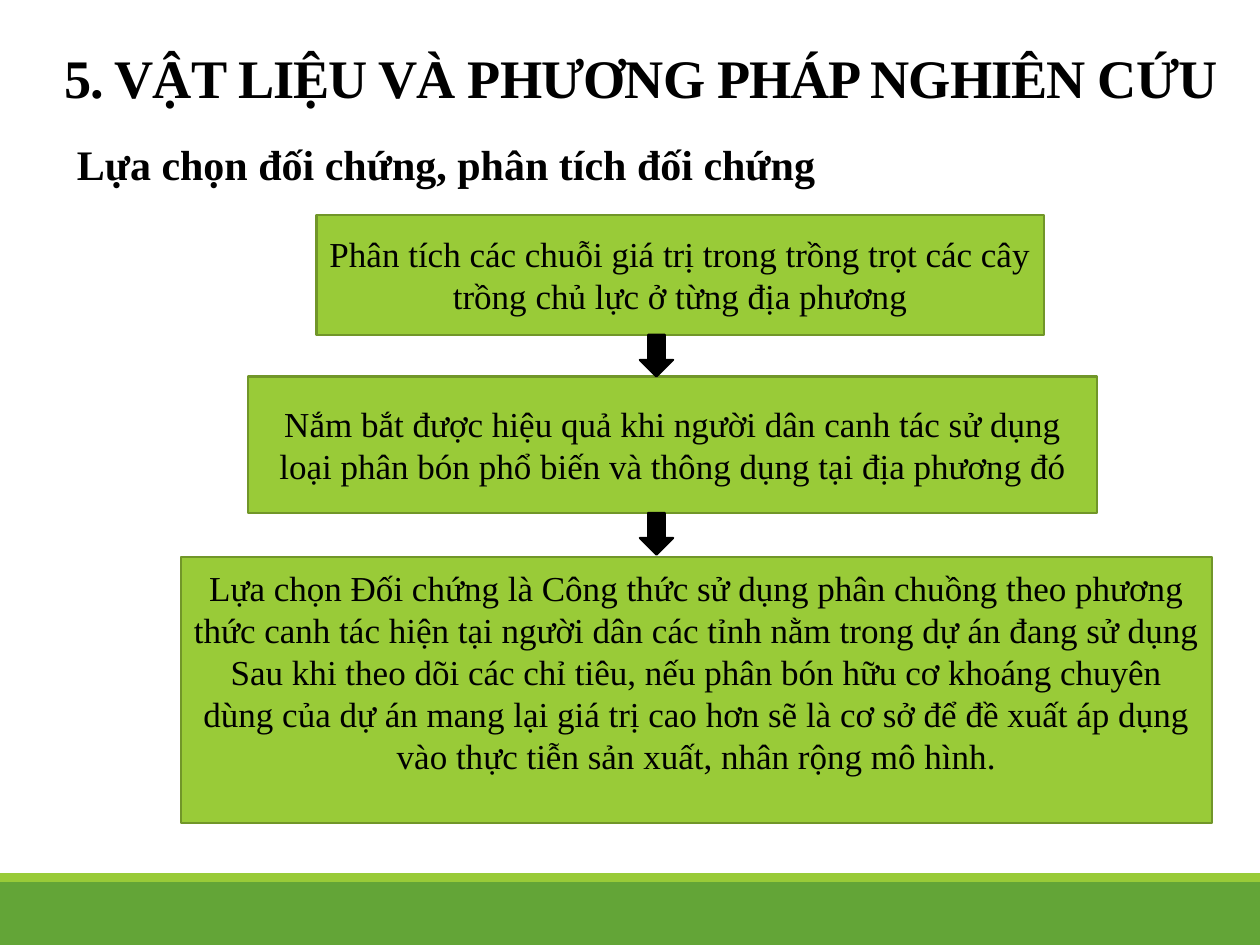
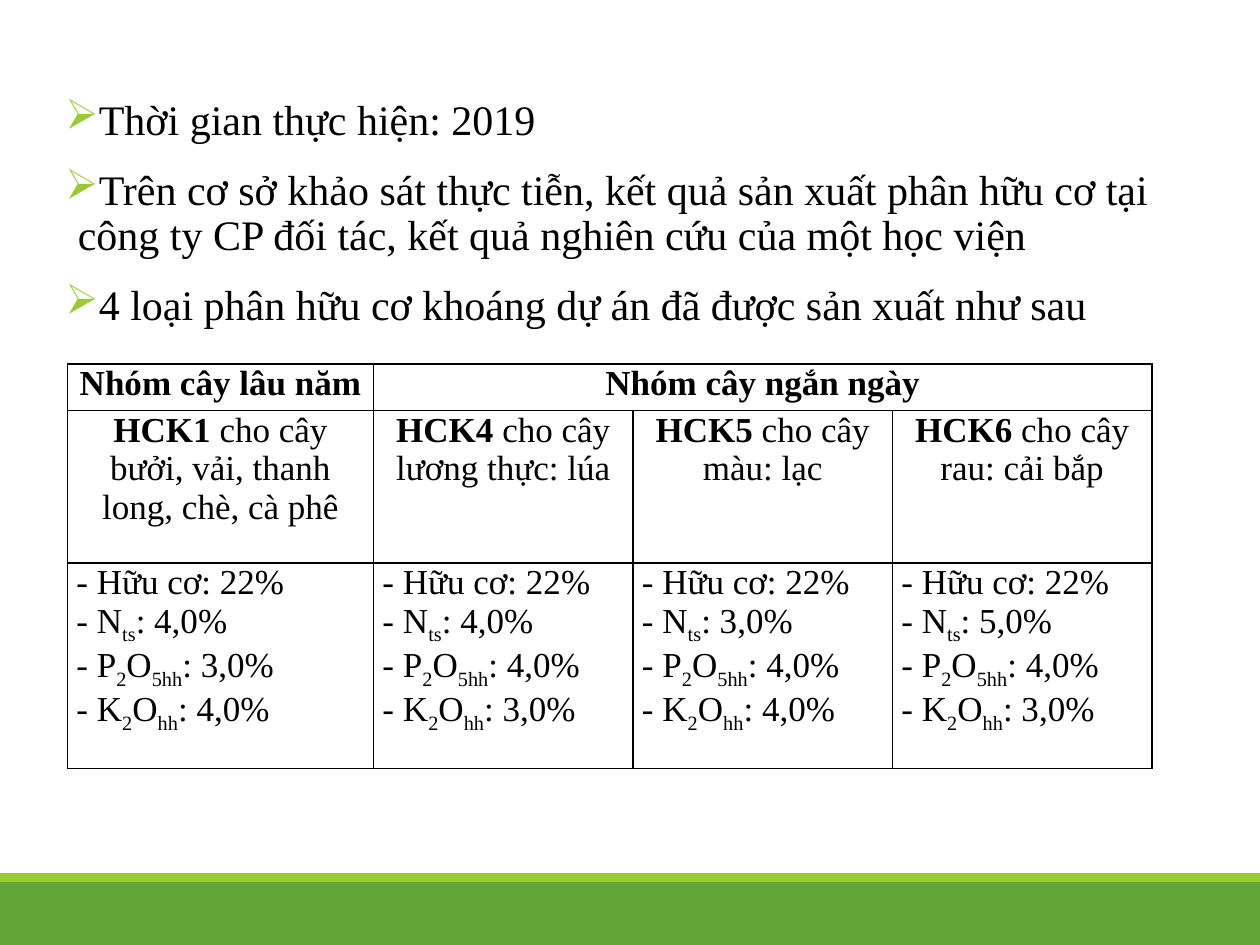
from dataclasses import dataclass

from lxml import etree
from pptx import Presentation
from pptx.dml.color import RGBColor
from pptx.enum import shapes, text
from pptx.oxml import ns
from pptx.util import Cm, Pt


@dataclass(frozen=True)
class Theme:
    font: str = "Times New Roman"
    black: str = "000000"
    lime: str = "99CB38"
    lime_edge: str = "719629"
    green: str = "63A537"
    title: int = 31
    body: int = 24
    small: int = 20
    edge: float = 1.25


THEME = Theme()
ALIGN = text.PP_ALIGN
SHAPE = shapes.MSO_SHAPE
WIDTH, HEIGHT = 25.4, 19.05

# Box on the flow chart: left, top, width, height, bottom inset, text
STEPS = [
    (6.38, 4.34, 14.66, 2.41, 0.13,
     "Phân tích các chuỗi giá trị trong trồng trọt các cây trồng chủ lực "
     "ở từng địa phương"),
    (5, 7.59, 17.12, 2.75, 0.13,
     "Nắm bắt được hiệu quả khi người dân canh tác sử dụng loại phân bón "
     "phổ biến và thông dụng tại địa phương đó"),
    (3.65, 11.23, 20.78, 5.36, 0.88,
     "Lựa chọn Đối chứng là Công thức sử dụng phân chuồng theo phương thức "
     "canh tác hiện tại người dân các tỉnh nằm trong dự án đang sử dụng Sau "
     "khi theo dõi các chỉ tiêu, nếu phân bón hữu cơ khoáng chuyên dùng của "
     "dự án mang lại giá trị cao hơn sẽ là cơ sở để đề xuất áp dụng vào thực "
     "tiễn sản xuất, nhân rộng mô hình."),
]

BULLETS = [
    "Thời gian thực hiện: 2019",
    "Trên cơ sở khảo sát thực tiễn, kết quả sản xuất phân hữu cơ tại công ty "
    "CP đối tác, kết quả nghiên cứu của một học viện",
    "4 loại phân hữu cơ khoáng dự án đã được sản xuất như sau",
]

# Fertiliser: name, crops, then total N, P2O5 and K2O contents
FERTILISERS = [
    ("HCK1", "bưởi, vải, thanh long, chè, cà phê", "4,0", "3,0", "4,0"),
    ("HCK4", "lương thực: lúa", "4,0", "4,0", "3,0"),
    ("HCK5", "màu: lạc", "3,0", "4,0", "4,0"),
    ("HCK6", "rau: cải bắp", "5,0", "4,0", "3,0"),
]


# --- Text helpers ---
def add_run(p, words, size, bold=False, subscript=False):
    r = p.add_run()
    r.text = words
    r.font.name = THEME.font
    r.font.size = Pt(size)
    r.font.bold = bold
    r.font.color.rgb = RGBColor.from_string(THEME.black)
    if subscript:
        r.font._element.set("baseline", "-25000")
    return r


def add_text(s, left, top, width, height, wrap=True):
    tf = s.shapes.add_textbox(Cm(left), Cm(top), Cm(width), Cm(height)).text_frame
    tf.word_wrap = wrap
    return tf


def add_bullet(p, char):
    pPr = p._p.get_or_add_pPr()
    pPr.set("marL", str(Cm(0.25)))
    pPr.set("indent", str(-Cm(0.25)))
    colour = etree.SubElement(pPr, ns.qn("a:buClr"))
    etree.SubElement(colour, ns.qn("a:srgbClr"), val=THEME.lime)
    etree.SubElement(pPr, ns.qn("a:buChar"), char=char)


# --- Shapes ---
def add_block(s, kind, left, top, width, height, fill, edge=None):
    sp = s.shapes.add_shape(kind, Cm(left), Cm(top), Cm(width), Cm(height))
    sp.shadow.inherit = False
    sp.fill.solid()
    sp.fill.fore_color.rgb = RGBColor.from_string(fill)
    if edge:
        sp.line.color.rgb = RGBColor.from_string(edge)
        sp.line.width = Pt(THEME.edge)
    else:
        sp.line.fill.background()
    return sp


def add_step(s, left, top, width, height, bottom_inset, words):
    sp = add_block(s, SHAPE.RECTANGLE, left, top, width, height,
                   THEME.lime, THEME.lime_edge)
    tf = sp.text_frame
    tf.word_wrap = True
    tf.vertical_anchor = text.MSO_ANCHOR.MIDDLE
    tf.margin_bottom = Cm(bottom_inset)
    tf.paragraphs[0].alignment = ALIGN.CENTER
    add_run(tf.paragraphs[0], words, THEME.small)


def new_slide(prs):
    s = prs.slides.add_slide(prs.slide_layouts[6])
    add_block(s, SHAPE.RECTANGLE, 0, 17.78, WIDTH, 1.27, THEME.green)
    add_block(s, SHAPE.RECTANGLE, 0, 17.6, WIDTH, 0.18, THEME.lime)
    return s


# --- Table ---
def style_cell(cell):
    cell.margin_left = cell.margin_right = Cm(0.18)
    cell.margin_top = cell.margin_bottom = 0
    cell.fill.background()
    tcPr = cell._tc.get_or_add_tcPr()
    for i, side in enumerate(("lnL", "lnR", "lnT", "lnB")):
        ln = etree.Element(ns.qn("a:" + side), w=str(Pt(1)))
        fill = etree.SubElement(ln, ns.qn("a:solidFill"))
        etree.SubElement(fill, ns.qn("a:srgbClr"), val=THEME.black)
        tcPr.insert(i, ln)


def fill_header(cell, bold_words, words=""):
    p = cell.text_frame.paragraphs[0]
    p.alignment = ALIGN.CENTER
    add_run(p, bold_words, THEME.small, bold=True)
    if words:
        add_run(p, words, THEME.small)


def fill_contents(cell, nitrogen, phosphate, potash):
    """Write one line per nutrient; text between underscores is subscript."""
    lines = ["- Hữu cơ: 22%", f"- N_ts_: {nitrogen}%",
             f"- P_2_O_5hh_: {phosphate}%", f"- K_2_O_hh_: {potash}%"]
    tf = cell.text_frame
    for i, line in enumerate(lines):
        p = tf.add_paragraph() if i else tf.paragraphs[0]
        p.alignment = ALIGN.JUSTIFY
        for j, part in enumerate(line.split("_")):
            add_run(p, part, THEME.small, subscript=j % 2 == 1)


def add_fertiliser_table(s, left, top, col_widths, row_heights):
    table = s.shapes.add_table(
        len(row_heights), len(col_widths), Cm(left), Cm(top),
        Cm(sum(col_widths)), Cm(sum(row_heights))).table
    table.first_row = table.horz_banding = False
    for column, width in zip(table.columns, col_widths):
        column.width = Cm(width)
    for row, height in zip(table.rows, row_heights):
        row.height = Cm(height)
    for cell in table.iter_cells():
        style_cell(cell)

    table.cell(0, 1).merge(table.cell(0, 3))
    fill_header(table.cell(0, 0), "Nhóm cây lâu năm")
    fill_header(table.cell(0, 1), "Nhóm cây ngắn ngày")
    for col, (name, crops, *contents) in enumerate(FERTILISERS):
        fill_header(table.cell(1, col), name, f" cho cây {crops}")
        fill_contents(table.cell(2, col), *contents)


# --- Slides ---
def build_control_slide(prs):
    s = new_slide(prs)
    tf = add_text(s, 0.43, 0.38, 24.97, 1.9)
    tf.vertical_anchor = text.MSO_ANCHOR.BOTTOM
    p = tf.paragraphs[0]
    p.alignment = ALIGN.CENTER
    p.line_spacing = 0.65
    r = add_run(p, "5. VẬT LIỆU VÀ PHƯƠNG PHÁP NGHIÊN CỨU", THEME.title, bold=True)
    r.font._element.set("spc", "-50")

    tf = add_text(s, 1.3, 2.67, 15.54, 1.27, wrap=False)
    add_run(tf.paragraphs[0], "Lựa chọn đối chứng, phân tích đối chứng",
            THEME.body, bold=True)

    for step in STEPS:
        add_step(s, *step)
    # An arrow leaves the bottom of every box but the last
    for _, top, _, height, *_ in STEPS[:-1]:
        add_block(s, SHAPE.DOWN_ARROW, 12.9, top + height, 0.67, 0.84,
                  THEME.black, THEME.black)


def build_fertiliser_slide(prs):
    s = new_slide(prs)
    tf = add_text(s, 1.32, 1.88, 21.95, 5.03)
    tf.margin_left = tf.margin_right = 0
    for i, words in enumerate(BULLETS):
        p = tf.add_paragraph() if i else tf.paragraphs[0]
        p.line_spacing = 0.9
        p.space_before = Pt(12)
        p.space_after = Pt(2)
        add_bullet(p, "➢")
        add_run(p, words, THEME.body)
    add_fertiliser_table(s, 1.36, 7.34, [6.17] + [5.23] * 3, [0.94, 3.07, 4.14])


def main():
    prs = Presentation()
    prs.slide_width, prs.slide_height = Cm(WIDTH), Cm(HEIGHT)
    build_control_slide(prs)
    build_fertiliser_slide(prs)
    prs.save("out.pptx")


if __name__ == "__main__":
    main()
